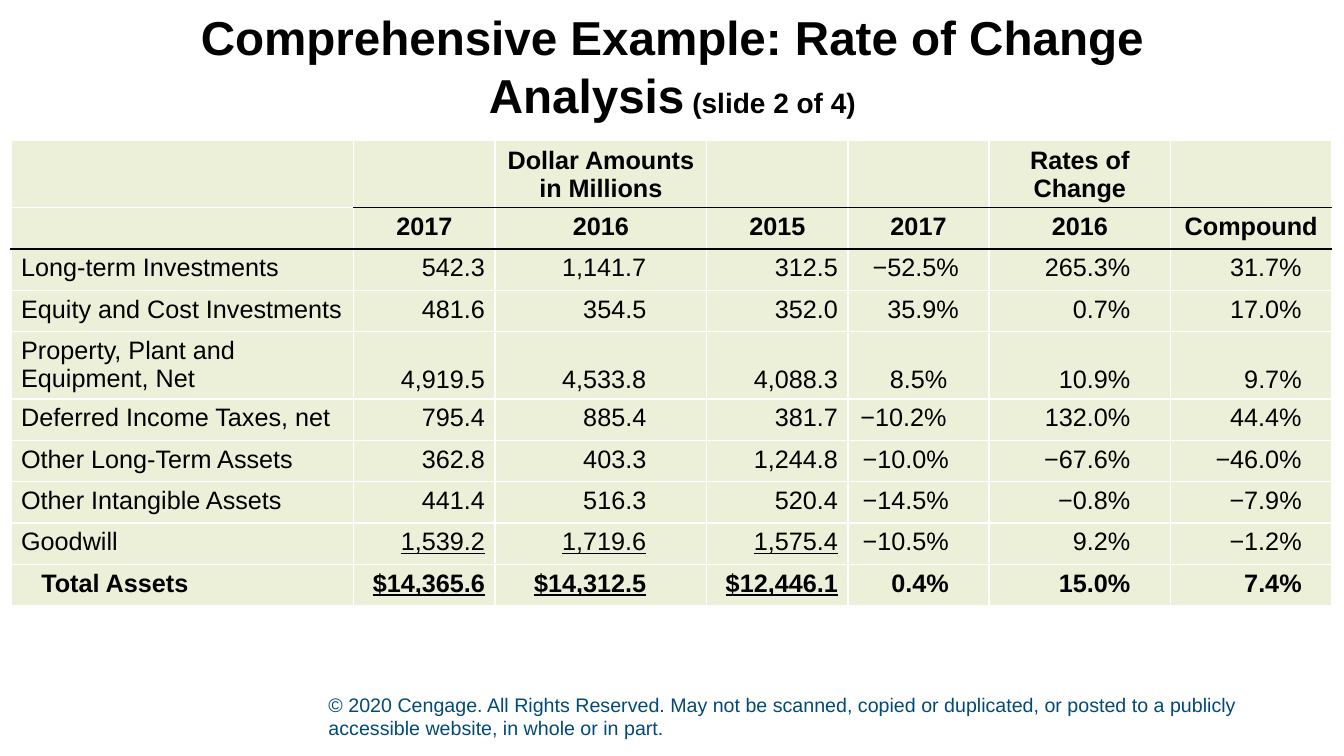
from pptx import Presentation
from pptx.dml.color import RGBColor
from pptx.enum.text import MSO_ANCHOR, MSO_AUTO_SIZE, PP_ALIGN
from pptx.oxml import parse_xml
from pptx.oxml.ns import nsdecls
from pptx.util import Inches, Pt

BLACK = RGBColor(0x00, 0x00, 0x00)
BLUE = RGBColor(0x00, 0x4A, 0x78)
CREAM = RGBColor(0xED, 0xF0, 0xD8)
FONT = "Arial"

WIDTHS = [3.4, 1.4, 2.1, 1.4, 1.4, 1.8, 1.6]
INSETS = [0.1, 0.1, 0.6, 0.1, 0.4, 0.4, 0.3]
ROWS = [
    ["", "", "Dollar Amounts in Millions", "", "", "Rates of Change", ""],
    ["", "2017", "2016", "2015", "2017", "2016", "Compound"],
    ["Long-term Investments", "542.3", "1,141.7", "312.5", "−52.5%", "265.3%", "31.7%"],
    ["Equity and Cost Investments", "481.6", "354.5", "352.0", "35.9%", "0.7%", "17.0%"],
    ["Property, Plant and Equipment, Net", "4,919.5", "4,533.8", "4,088.3", "8.5%", "10.9%", "9.7%"],
    ["Deferred Income Taxes, net", "795.4", "885.4", "381.7", "−10.2%", "132.0%", "44.4%"],
    ["Other Long-Term Assets", "362.8", "403.3", "1,244.8", "−10.0%", "−67.6%", "−46.0%"],
    ["Other Intangible Assets", "441.4", "516.3", "520.4", "−14.5%", "−0.8%", "−7.9%"],
    ["Goodwill", "1,539.2", "1,719.6", "1,575.4", "−10.5%", "9.2%", "−1.2%"],
    ["Total Assets", "$14,365.6", "$14,312.5", "$12,446.1", "0.4%", "15.0%", "7.4%"],
]
HEADS = 2
TALL = (0, 4)
GOODWILL, TOTAL = 8, 9
DOLLARS = range(1, 4)
RATE = 4


def add_run(para, text, size, color=BLACK, bold=False, line=False):
    run = para.add_run()
    run.text = text
    font = run.font
    font.name, font.size, font.bold = FONT, Pt(size), bold
    font.underline = line
    font.color.rgb = color


def add_title(slide):
    title = slide.shapes.title
    title.left, title.top = Inches(0.92), Inches(0.15)
    title.width, title.height = Inches(11.5), Inches(1)
    frame = title.text_frame
    frame.auto_size = MSO_AUTO_SIZE.NONE
    frame.vertical_anchor = MSO_ANCHOR.MIDDLE
    para = frame.paragraphs[0]
    para.alignment = PP_ALIGN.CENTER
    add_run(para, "Comprehensive Example: Rate of Change Analysis", 34, bold=True)
    add_run(para, " (slide 2 of 4)", 20, bold=True)


def add_rule(cell, side):
    """Draw a thin black border; side is lnT or lnB."""
    props = cell._tc.get_or_add_tcPr()
    edge = parse_xml(
        f'<a:{side} {nsdecls("a")} w="12700"><a:solidFill>'
        f'<a:srgbClr val="{BLACK}"/></a:solidFill></a:{side}>'
    )
    at = len(props.findall(edge.tag.replace(side, "lnT")))
    props.insert(at, edge)


def fill_cell(cell, row, col, text):
    cell.fill.solid()
    cell.fill.fore_color.rgb = CREAM
    para = cell.text_frame.paragraphs[0]
    head = row < HEADS
    if head:
        para.alignment = PP_ALIGN.CENTER
    elif col == 0:
        para.alignment = PP_ALIGN.LEFT
        if row == TOTAL:
            cell.margin_left = Inches(0.3)
    else:
        para.alignment = PP_ALIGN.RIGHT
        cell.margin_right = Inches(INSETS[col])
        if col == RATE and row in (2, 3):
            cell.margin_right = Inches(0.3)
        elif col == RATE and row == 4:
            cell.margin_right = Inches(0.1)
        if col == RATE and row in (4, 5):
            para.alignment = PP_ALIGN.CENTER
    if row in TALL and col > 0:
        cell.vertical_anchor = MSO_ANCHOR.BOTTOM
    if text:
        line = row in (GOODWILL, TOTAL) and col in DOLLARS
        add_run(para, text, 18, bold=head or row == TOTAL, line=line)
    if row == 2 or (row == 1 and col > 0):
        add_rule(cell, "lnT")
    if row == 1 or (row == 0 and col > 0):
        add_rule(cell, "lnB")


def add_grid(slide):
    frame = slide.shapes.add_table(
        len(ROWS), len(WIDTHS), Inches(0.11), Inches(1.39), Inches(13.1), Inches(4.62)
    )
    table = frame.table
    table.first_row = table.horz_banding = False
    for col, width in zip(table.columns, WIDTHS):
        col.width = Inches(width)
    for row, texts in enumerate(ROWS):
        table.rows[row].height = Inches(0.67 if row in TALL else 0.41)
        for col, text in enumerate(texts):
            fill_cell(table.cell(row, col), row, col, text)


def add_notice(slide):
    box = slide.shapes.add_textbox(Inches(3.16), Inches(6.89), Inches(9.63), Inches(0.5))
    frame = box.text_frame
    frame.word_wrap = True
    frame.vertical_anchor = MSO_ANCHOR.BOTTOM
    add_run(
        frame.paragraphs[0],
        "© 2020 Cengage. All Rights Reserved. May not be scanned, copied or "
        "duplicated, or posted to a publicly accessible website, in whole or in part.",
        14,
        BLUE,
    )


def main():
    deck = Presentation()
    deck.slide_width, deck.slide_height = Inches(13.33), Inches(7.5)
    slide = deck.slides.add_slide(deck.slide_layouts[5])
    add_title(slide)
    add_grid(slide)
    add_notice(slide)
    deck.save("out.pptx")


if __name__ == "__main__":
    main()
